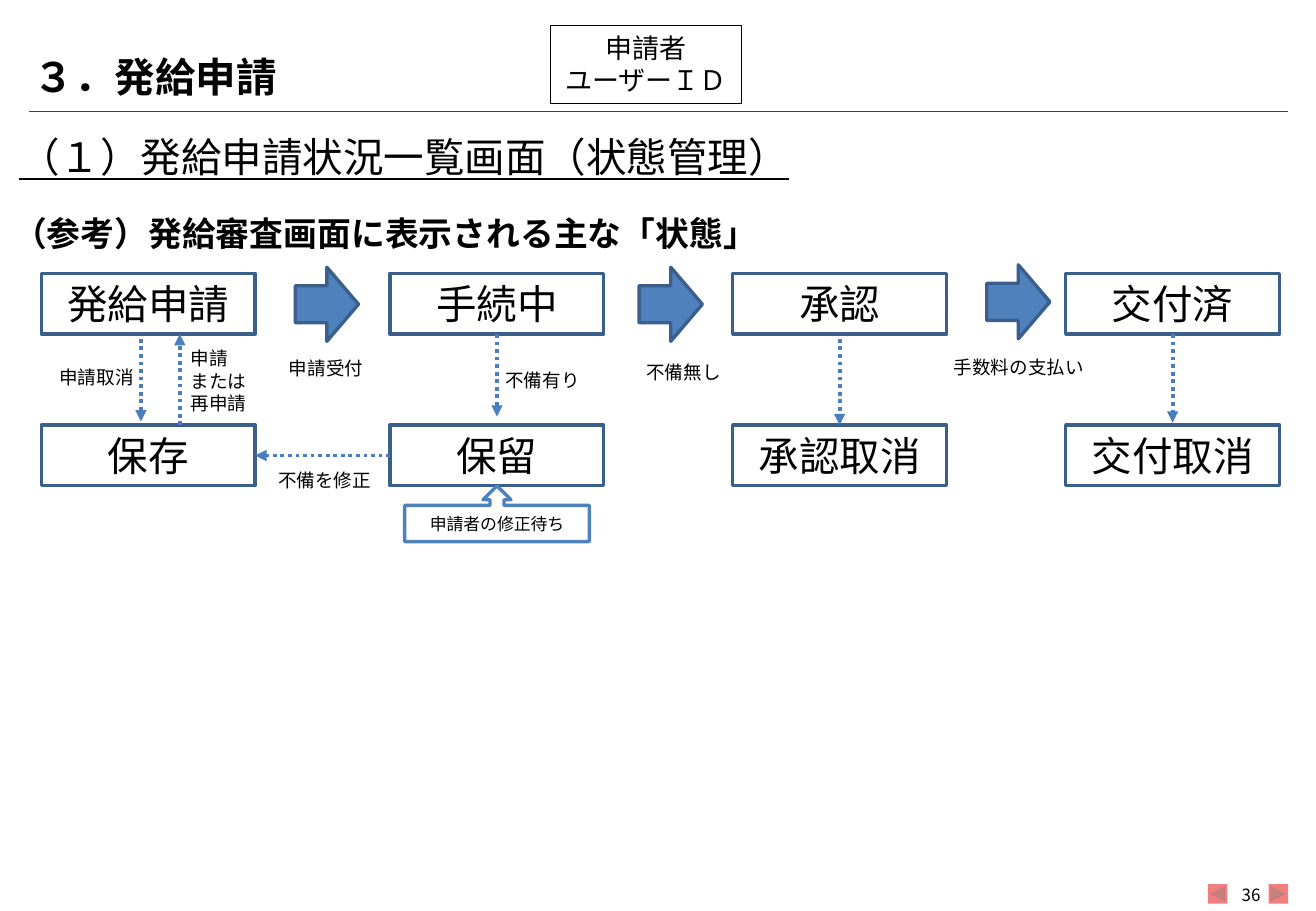
import pptx
import pptx.dml.color
import pptx.enum.dml
import pptx.enum.shapes
import pptx.enum.text
import pptx.oxml.ns
import pptx.util
from lxml import etree

W, H = 10.83, 7.5
FONT = "Noto Sans CJK JP"
BLACK, WHITE, RED = "000000", "FFFFFF", "E60000"
BLUE, EDGE, DOTS = "4F81BD", "3A5F8C", "4B7EBC"
SHAPE = pptx.enum.shapes.MSO_SHAPE
ALIGN = pptx.enum.text.PP_ALIGN
ANCHOR = pptx.enum.text.MSO_ANCHOR
inch = pptx.util.Inches


def color(value):
    return pptx.dml.color.RGBColor.from_string(value)


def add_xml(parent, tag, **attrs):
    return etree.SubElement(parent, pptx.oxml.ns.qn(tag), **attrs)


def write(sp, text, size, align=ALIGN.LEFT, anchor=ANCHOR.TOP, bold=False, underline=False):
    tf = sp.text_frame
    tf.word_wrap = True
    tf.vertical_anchor = anchor
    tf.text = text
    for p in tf.paragraphs:
        p.alignment = align
        for r in p.runs:
            r.font.size = pptx.util.Pt(size)
            r.font.bold = bold
            r.font.underline = underline
            r.font.color.rgb = color(BLACK)
            r.font.name = FONT
            add_xml(r.font._element, "a:ea", typeface=FONT)


def add_text(s, box, text, size, **style):
    sp = s.shapes.add_textbox(*map(inch, box))
    write(sp, text, size, **style)
    return sp


def add_shape(s, kind, box, fill=None, line=None, width=2.0):
    sp = s.shapes.add_shape(kind, *map(inch, box))
    sp.shadow.inherit = False
    if fill:
        sp.fill.solid()
        sp.fill.fore_color.rgb = color(fill)
    else:
        sp.fill.background()
    if line:
        sp.line.color.rgb = color(line)
        sp.line.width = pptx.util.Pt(width)
    else:
        sp.line.fill.background()
    return sp


def add_line(s, start, end, line, width):
    cx = s.shapes.add_connector(pptx.enum.shapes.MSO_CONNECTOR.STRAIGHT,
                                *map(inch, start + end))
    cx.line.color.rgb = color(line)
    cx.line.width = pptx.util.Pt(width)
    add_xml(cx._element.spPr, "a:effectLst")
    return cx


def add_dotted_arrow(s, start, end, begin_at=None, end_at=None):
    """Draw a dotted arrow; begin_at and end_at are (shape, side) joints."""
    cx = add_line(s, start, end, DOTS, 2.25)
    cx.line.dash_style = pptx.enum.dml.MSO_LINE.ROUND_DOT
    add_xml(cx.line._get_or_add_ln(), "a:tailEnd", type="triangle")
    if begin_at:
        cx.begin_connect(*begin_at)
    if end_at:
        cx.end_connect(*end_at)


def add_header(s, x, y, w, h):
    """Title, user badge and the rule along the bottom of the box."""
    add_line(s, (x, y + h), (x + w, y + h), RED, 0.25)
    add_text(s, (x - 0.06, y + h - 0.59, 2.64, 0.59), "３．発給申請", 24,
             anchor=ANCHOR.MIDDLE, bold=True)
    badge = add_shape(s, SHAPE.RECTANGLE, (x + 4.29, y, 1.57, 0.64), line=BLACK, width=0.75)
    write(badge, "申請者\nユーザーＩＤ", 16, align=ALIGN.CENTER)


def add_headings(s, x, y, w):
    add_text(s, (x + 0.05, y, w, 0.51), "（１）発給申請状況一覧画面（状態管理）", 24, underline=True)
    add_text(s, (x, y + 0.66, w, 0.44), "（参考）発給審査画面に表示される主な「状態」", 20, bold=True)


def add_state_flow(s, x, y, w, h):
    """Two rows of states in four columns, with the moves between them."""
    state_w, state_h = 1.76, 0.5
    columns = [x, x + 2.87, x + 5.69, x + w - state_w]
    lower = y + h - state_h
    states = {}
    for top, names in ((y, ("発給申請", "手続中", "承認", "交付済")),
                       (lower, ("保存", "保留", "承認取消", "交付取消"))):
        for left, name in zip(columns, names):
            sp = add_shape(s, SHAPE.RECTANGLE, (left, top, state_w, state_h), line=EDGE)
            write(sp, name, 24, align=ALIGN.CENTER, anchor=ANCHOR.MIDDLE)
            states[name] = sp

    for dx, dy in ((2.09, -0.05), (4.92, -0.05), (7.78, -0.07)):
        add_shape(s, SHAPE.RIGHT_ARROW, (x + dx, y + dy, 0.52, 0.61), BLUE, EDGE)

    upper_end = y + state_h
    mids = [left + state_w / 2 for left in columns]
    add_dotted_arrow(s, (x + 0.82, upper_end + 0.04), (x + 0.82, lower - 0.03))
    add_dotted_arrow(s, (x + 1.14, lower), (x + 1.14, upper_end))
    add_dotted_arrow(s, (mids[1], upper_end), (mids[1], lower - 0.07),
                     begin_at=(states["手続中"], 2))
    add_dotted_arrow(s, (mids[2], upper_end + 0.04), (mids[2], lower),
                     end_at=(states["承認取消"], 0))
    add_dotted_arrow(s, (mids[3], upper_end), (mids[3], lower - 0.02),
                     begin_at=(states["交付済"], 2))
    row_mid = lower + state_h / 2
    add_dotted_arrow(s, (columns[1], row_mid), (x + state_w, row_mid),
                     begin_at=(states["保留"], 1), end_at=(states["保存"], 3))

    for dx, dy, width, label in (
            (0.05, 0.71, 1.01, "申請取消"),
            (1.13, 0.56, 1.02, "申請\nまたは\n再申請"),
            (1.94, 0.64, 0.96, "申請受付"),
            (3.72, 0.74, 0.96, "不備有り"),
            (4.88, 0.67, 0.96, "不備無し"),
            (7.41, 0.63, 1.29, "手数料の支払い"),
            (1.85, 1.56, 1.19, "不備を修正")):
        height = 0.29 + 0.18 * label.count("\n")
        add_text(s, (x + dx, y + dy, width, height), label, 11)

    note = add_shape(s, SHAPE.UP_ARROW_CALLOUT, (mids[1] - 0.76, y + h, 1.52, 0.46), WHITE, BLUE)
    write(note, "申請者の修正待ち", 10, align=ALIGN.CENTER, anchor=ANCHOR.MIDDLE)


def add_page_controls(s, x, y, w, h):
    """Back and forward buttons at the ends of the box, page number between."""
    for left, kind in ((x, SHAPE.ACTION_BUTTON_BACK_OR_PREVIOUS),
                       (x + w - h, SHAPE.ACTION_BUTTON_FORWARD_OR_NEXT)):
        sp = add_shape(s, kind, (left, y, h, h), RED)
        rgb = sp._element.spPr.find(".//" + pptx.oxml.ns.qn("a:srgbClr"))
        add_xml(rgb, "a:alpha", val="50000")
    number = add_text(s, (x + 0.2, y + 0.01, 0.31, h), "36", 10,
                      align=ALIGN.CENTER, anchor=ANCHOR.MIDDLE)
    number.text_frame.margin_left = number.text_frame.margin_right = 0


def main():
    prs = pptx.Presentation()
    prs.slide_width, prs.slide_height = inch(W), inch(H)
    s = prs.slides.add_slide(prs.slide_layouts[6])
    add_header(s, 0.24, 0.21, W - 0.47, 0.71)
    add_headings(s, 0.01, 1.04, 9.45)
    add_state_flow(s, 0.34, 2.25, W - 0.64, 1.75)
    add_page_controls(s, W - 0.89, H - 0.22, 0.66, 0.16)
    prs.save("out.pptx")


if __name__ == "__main__":
    main()
